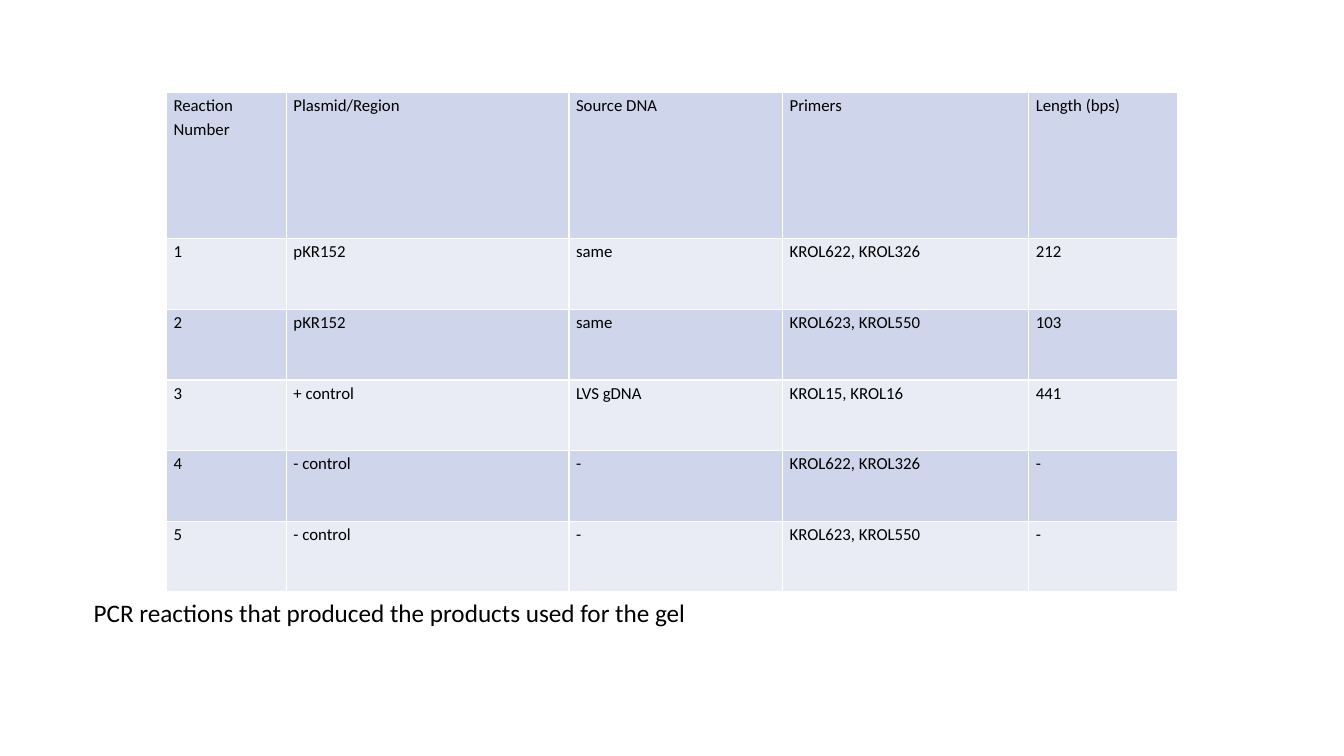
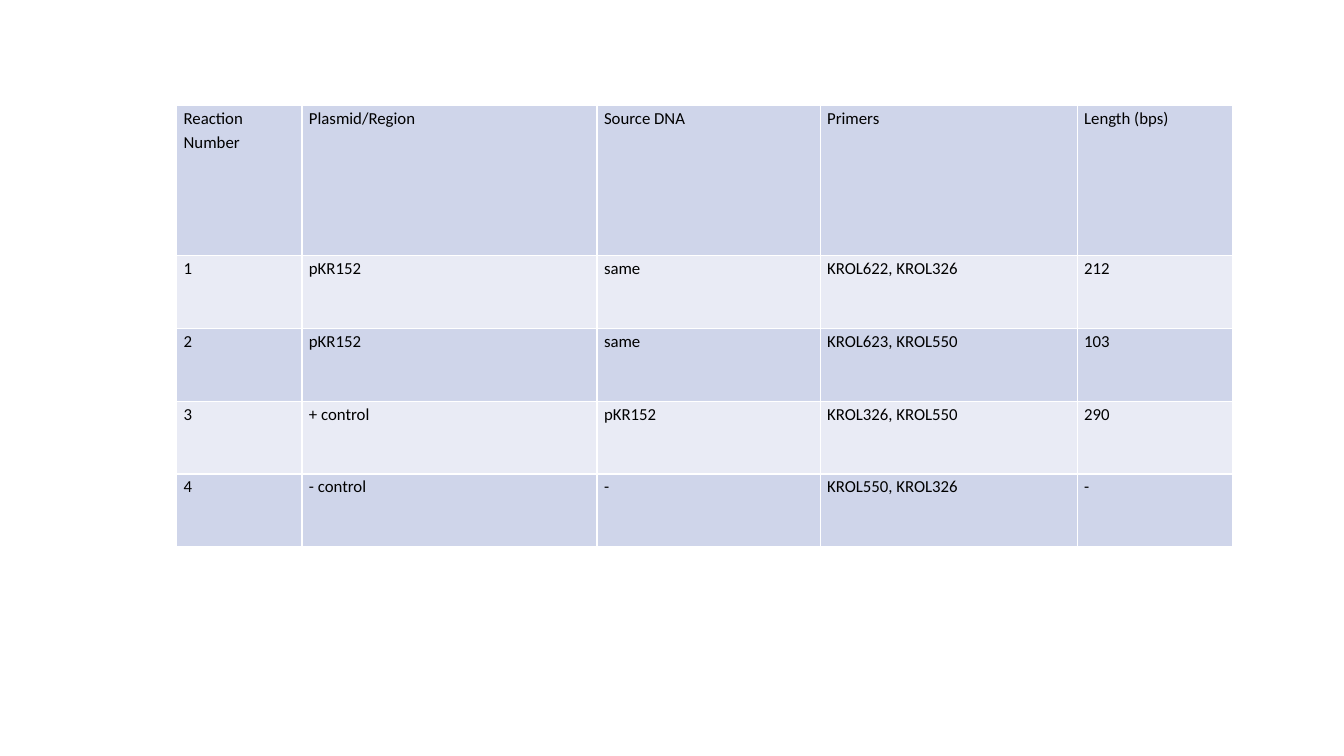
from dataclasses import dataclass
from typing import Optional

from lxml.etree import SubElement
from pptx import Presentation
from pptx.dml.color import RGBColor
from pptx.enum.text import MSO_AUTO_SIZE
from pptx.oxml.ns import qn
from pptx.slide import Slide
from pptx.table import _Cell
from pptx.text.text import _Paragraph
from pptx.util import Pt


@dataclass(frozen=True)
class Theme:
    """Colours, font and sizes shared by both slides."""

    font: str = "Calibri"
    text: RGBColor = RGBColor(0x00, 0x00, 0x00)
    bands: tuple[RGBColor, ...] = (
        RGBColor(0xCF, 0xD5, 0xEA),
        RGBColor(0xE9, 0xEB, 0xF5),
    )
    border: RGBColor = RGBColor(0xFF, 0xFF, 0xFF)
    border_width: float = 1
    cell_size: float = 12
    caption_size: float = 18
    line_spacing: float = 1.15
    cell_margin: float = 5


@dataclass(frozen=True)
class ReactionTable:
    """Place, row heights, data and caption of one table of PCR reactions."""

    left: float
    top: float
    width: float
    header_height: float
    row_height: float
    reactions: tuple[tuple[str, ...], ...]
    caption: Optional[str] = None


THEME = Theme()
HEADINGS = ("Reaction Number", "Plasmid/Region", "Source DNA", "Primers", "Length (bps)")
COLUMN_WEIGHTS = (85.6, 201.7, 152.5, 175.7, 106.5)
SHARED_REACTIONS = (
    ("pKR152", "same", "KROL622, KROL326", "212"),
    ("pKR152", "same", "KROL623, KROL550", "103"),
)
TABLES = (
    ReactionTable(
        119, 66.3, 722.5, 104.2, 50.5,
        SHARED_REACTIONS + (
            ("+ control", "LVS gDNA", "KROL15, KROL16", "441"),
            ("- control", "-", "KROL622, KROL326", "-"),
            ("- control", "-", "KROL623, KROL550", "-"),
        ),
        "PCR reactions that produced the products used for the gel",
    ),
    ReactionTable(
        126.2, 75.6, 754.6, 107, 52,
        SHARED_REACTIONS + (
            ("+ control", "pKR152", "KROL326, KROL550", "290"),
            ("- control", "-", "KROL550, KROL326", "-"),
        ),
    ),
)


def add_text(paragraph: _Paragraph, text: str, size: float) -> None:
    """Add one run in the theme font."""
    run = paragraph.add_run()
    run.text = text
    run.font.name = THEME.font
    run.font.size = Pt(size)
    run.font.color.rgb = THEME.text


def add_borders(cell: _Cell) -> None:
    """Draw the theme border on all four sides of a cell."""
    properties = cell._tc.get_or_add_tcPr()
    for side in ("a:lnL", "a:lnR", "a:lnT", "a:lnB"):
        line = SubElement(properties, qn(side), w=str(Pt(THEME.border_width)))
        fill = SubElement(line, qn("a:solidFill"))
        SubElement(fill, qn("a:srgbClr"), val=str(THEME.border))


def format_cell(cell: _Cell, text: str, band: RGBColor) -> None:
    """Write a cell and set its margins, borders and fill."""
    cell.margin_left = cell.margin_right = Pt(THEME.cell_margin)
    cell.margin_top = cell.margin_bottom = Pt(0)
    add_borders(cell)
    cell.fill.solid()
    cell.fill.fore_color.rgb = band
    paragraph = cell.text_frame.paragraphs[0]
    paragraph.line_spacing = THEME.line_spacing
    add_text(paragraph, text, THEME.cell_size)


def add_reaction_table(slide: Slide, content: ReactionTable) -> None:
    """Add the banded table, numbering its reactions from one."""
    rows = [HEADINGS]
    rows += [(str(number), *values) for number, values in enumerate(content.reactions, 1)]
    height = content.header_height + content.row_height * len(content.reactions)
    table = slide.shapes.add_table(
        len(rows), len(HEADINGS),
        Pt(content.left), Pt(content.top), Pt(content.width), Pt(height),
    ).table
    table.first_row = False
    table.horz_banding = False
    for column, weight in zip(table.columns, COLUMN_WEIGHTS):
        column.width = Pt(content.width * weight / sum(COLUMN_WEIGHTS))
    for row_index, values in enumerate(rows):
        row = table.rows[row_index]
        row.height = Pt(content.row_height if row_index else content.header_height)
        band = THEME.bands[row_index % len(THEME.bands)]
        for cell, text in zip(row.cells, values):
            format_cell(cell, text, band)


def add_caption(slide: Slide, text: str) -> None:
    """Add the caption below the table."""
    text_box = slide.shapes.add_textbox(Pt(59.8), Pt(423.4), Pt(831.6), Pt(29))
    frame = text_box.text_frame
    frame.word_wrap = True
    frame.auto_size = MSO_AUTO_SIZE.SHAPE_TO_FIT_TEXT
    add_text(frame.paragraphs[0], text, THEME.caption_size)


def main() -> None:
    """Build and save the presentation."""
    presentation = Presentation()
    presentation.slide_width = Pt(960)
    presentation.slide_height = Pt(540)
    blank_layout = presentation.slide_layouts.get_by_name("Blank")
    for content in TABLES:
        slide = presentation.slides.add_slide(blank_layout)
        add_reaction_table(slide, content)
        if content.caption:
            add_caption(slide, content.caption)
    presentation.save("out.pptx")


if __name__ == "__main__":
    main()
